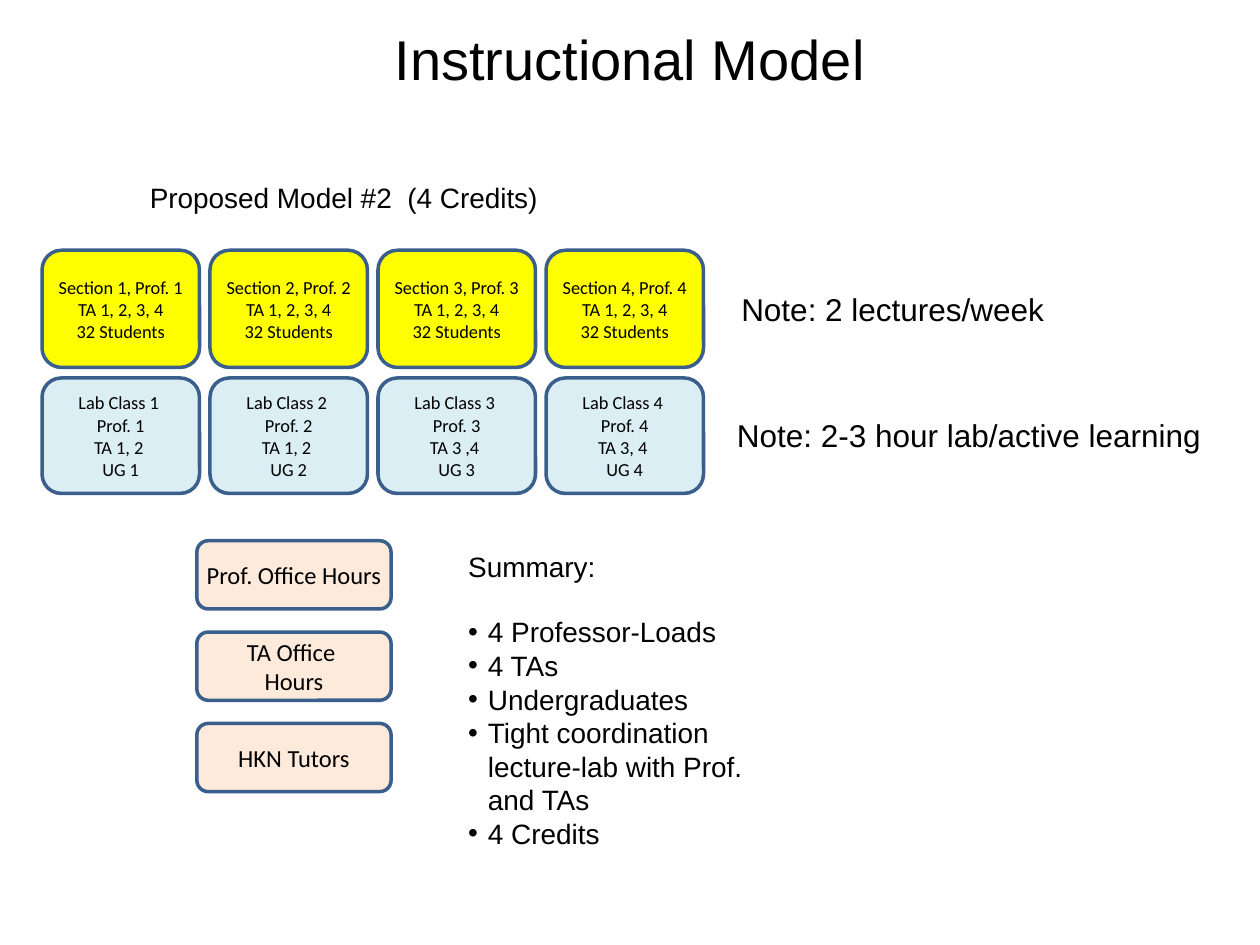
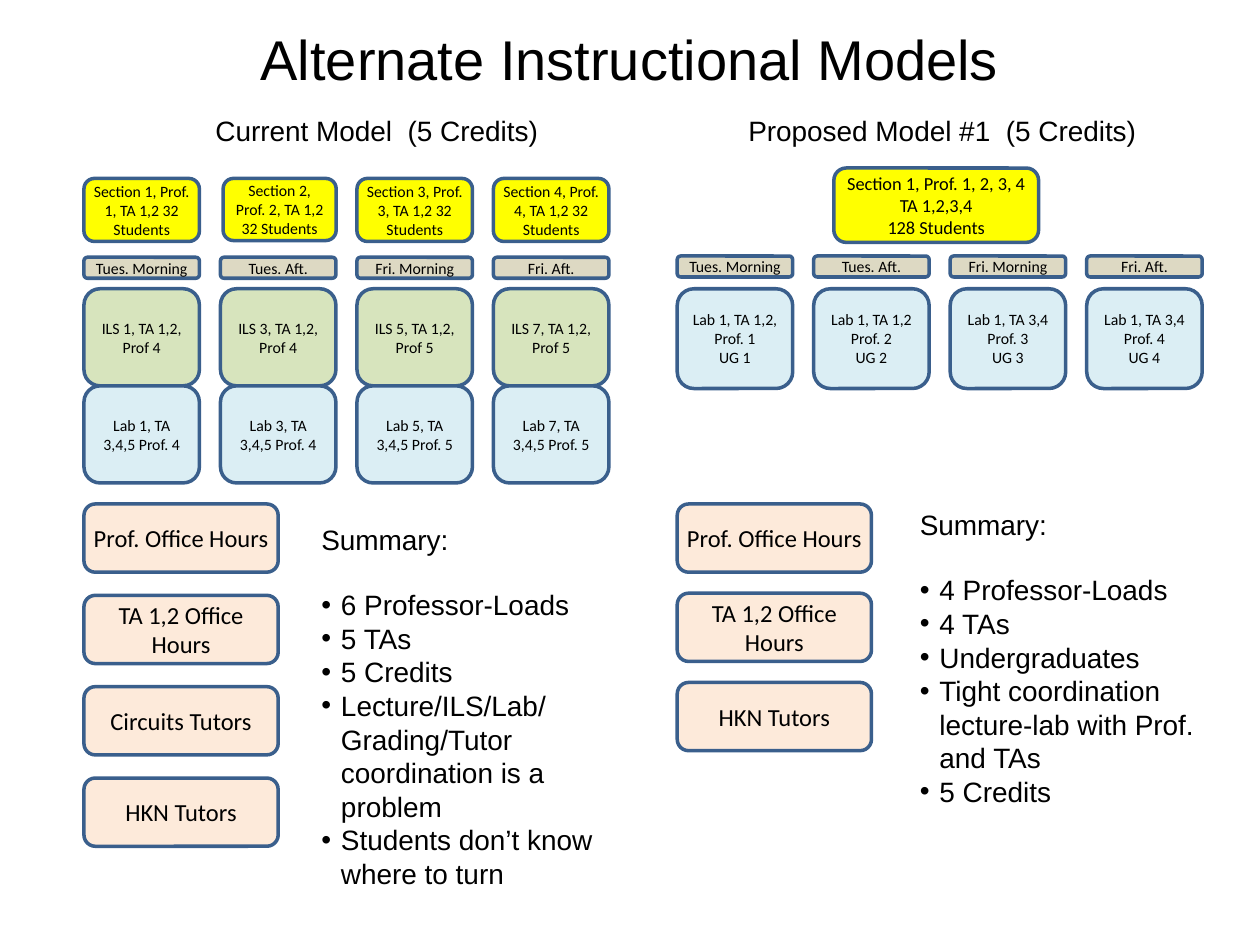
from dataclasses import dataclass

from lxml import etree
from pptx import Presentation
from pptx.dml.color import RGBColor
from pptx.enum.shapes import MSO_SHAPE
from pptx.enum.text import MSO_ANCHOR, MSO_AUTO_SIZE, PP_ALIGN
from pptx.oxml.ns import qn
from pptx.shapes.autoshape import Shape
from pptx.slide import Slide
from pptx.text.text import TextFrame
from pptx.util import Pt

ROUNDED = MSO_SHAPE.ROUNDED_RECTANGLE
MIDDLE, TOP = MSO_ANCHOR.MIDDLE, MSO_ANCHOR.TOP
CENTER, LEFT = PP_ALIGN.CENTER, PP_ALIGN.LEFT
NO_FIT = MSO_AUTO_SIZE.NONE

TITLE_ONLY = 5
BODY_FONT, BOX_FONT = "Arial", "Calibri"
BLACK, OUTLINE = "000000", "3A5F8C"
YELLOW, BLUE, GREEN = "FFFF00", "DBEEF4", "D7E4BD"
PEACH, TAN = "FDEADA", "DDD9C3"
TIGHT, ROOMY = (3.6, 1.8), (7.2, 3.6)
BULLET_INDENT = 11.25
SUMMARY_GAP = 18.4

DAYS = ["Tues. Morning", "Tues. Aft.", "Fri. Morning", "Fri. Aft."]


@dataclass(frozen=True)
class Area:
    left: float
    top: float
    width: float
    height: float


@dataclass(frozen=True)
class BoxStyle:
    fill: str
    size: float
    insets: tuple[float, float] = TIGHT


@dataclass(frozen=True)
class Series:
    """Equal boxes, one for each text, stepping across or down from the first."""
    first: Area
    style: BoxStyle
    texts: list[str]
    step_x: float = 0
    step_y: float = 0


LECTURE = BoxStyle(YELLOW, 10.5)
LAB = BoxStyle(BLUE, 10.5)
SMALL_LECTURE = BoxStyle(YELLOW, 9)
SMALL_LAB = BoxStyle(BLUE, 9)
ROOMY_LAB = BoxStyle(BLUE, 9, ROOMY)
STUDIO = BoxStyle(GREEN, 9, ROOMY)
DAY = BoxStyle(TAN, 9)
SUPPORT = BoxStyle(PEACH, 14)


def color(value: str) -> RGBColor:
    return RGBColor.from_string(value)


def prepare_frame(frame: TextFrame, insets: tuple[float, float],
                  anchor: MSO_ANCHOR = TOP, wrap: bool = True) -> None:
    frame.margin_left = frame.margin_right = Pt(insets[0])
    frame.margin_top = frame.margin_bottom = Pt(insets[1])
    frame.vertical_anchor = anchor
    frame.auto_size = NO_FIT
    frame.word_wrap = wrap


def write_lines(frame: TextFrame, text: str, font: str, size: float,
                alignment: PP_ALIGN) -> None:
    """Write one paragraph for each line of the text."""
    for index, line in enumerate(text.split("\n")):
        paragraph = frame.add_paragraph() if index else frame.paragraphs[0]
        paragraph.alignment = alignment
        run = paragraph.add_run()
        run.text = line
        run.font.name = font
        run.font.size = Pt(size)
        run.font.color.rgb = color(BLACK)


def place(shape: Shape, area: Area) -> None:
    shape.left, shape.top = Pt(area.left), Pt(area.top)
    shape.width, shape.height = Pt(area.width), Pt(area.height)


def add_titled_slide(presentation: Presentation, title: str) -> Slide:
    slide = presentation.slides.add_slide(presentation.slide_layouts[TITLE_ONLY])
    shape = slide.shapes.title
    place(shape, Area(12, 12, 696, 42.5))
    prepare_frame(shape.text_frame, TIGHT)
    write_lines(shape.text_frame, title, BODY_FONT, 32, CENTER)
    return slide


def add_box(slide: Slide, area: Area, style: BoxStyle, text: str) -> Shape:
    shape = slide.shapes.add_shape(ROUNDED, Pt(area.left), Pt(area.top),
                                   Pt(area.width), Pt(area.height))
    shape.shadow.inherit = False
    shape.fill.solid()
    shape.fill.fore_color.rgb = color(style.fill)
    shape.line.color.rgb = color(OUTLINE)
    shape.line.width = Pt(2)
    prepare_frame(shape.text_frame, style.insets, MIDDLE)
    write_lines(shape.text_frame, text, BOX_FONT, style.size, CENTER)
    return shape


def add_series(slide: Slide, series: Series) -> list[Shape]:
    first = series.first
    return [
        add_box(slide, Area(first.left + index * series.step_x,
                            first.top + index * series.step_y,
                            first.width, first.height), series.style, text)
        for index, text in enumerate(series.texts)
    ]


def add_text(slide: Slide, area: Area, text: str, size: float = 16,
             insets: tuple[float, float] = TIGHT, wrap: bool = False) -> TextFrame:
    shape = slide.shapes.add_textbox(Pt(area.left), Pt(area.top),
                                     Pt(area.width), Pt(area.height))
    prepare_frame(shape.text_frame, insets, wrap=wrap)
    write_lines(shape.text_frame, text, BODY_FONT, size, LEFT)
    return shape.text_frame


def add_summary(slide: Slide, area: Area, points: list[str]) -> None:
    frame = add_text(slide, area, "\n".join(["Summary:", *points]), wrap=True)
    heading, *bullets = frame.paragraphs
    heading.space_after = Pt(SUMMARY_GAP)
    for paragraph in bullets:
        properties = paragraph._p.get_or_add_pPr()
        properties.set("marL", str(Pt(BULLET_INDENT)))
        properties.set("indent", str(-Pt(BULLET_INDENT)))
        etree.SubElement(properties, qn("a:buFont"), typeface=BODY_FONT)
        etree.SubElement(properties, qn("a:buChar"), char="•")


def support_boxes(left: float, top: float, step: float, texts: list[str]) -> Series:
    return Series(Area(left, top, 111, 39), SUPPORT, texts, step_y=step)


def proposed_points(credits: int) -> list[str]:
    return ["4 Professor-Loads", "4 TAs", "Undergraduates",
            "Tight coordination lecture-lab with Prof. and TAs",
            f"{credits} Credits"]


def build_four_credit_slide(presentation: Presentation) -> None:
    slide = add_titled_slide(presentation, "Instructional Model")
    add_text(slide, Area(82, 101.5, 232, 23), "Proposed Model #2  (4 Credits)")

    # Lectures above their lab classes
    lectures = [f"Section {n}, Prof. {n}\nTA 1, 2, 3, 4\n32 Students"
                for n in range(1, 5)]
    assistants = ["1, 2", "1, 2", "3 ,4", "3, 4"]
    labs = [f"Lab Class {n} \nProf. {n}\nTA {pair} \nUG {n}"
            for n, pair in enumerate(assistants, start=1)]
    add_series(slide, Series(Area(24, 143, 90, 67), LECTURE, lectures, step_x=96))
    add_series(slide, Series(Area(24, 216, 90, 66), LAB, labs, step_x=96))
    add_text(slide, Area(416.5, 162, 189.5, 29), "Note: 2 lectures/week", 18, ROOMY)
    add_text(slide, Area(414, 234, 282, 29),
             "Note: 2-3 hour lab/active learning", 18, ROOMY)

    # Support and summary
    add_series(slide, support_boxes(112.5, 309, 52.2, [
        "Prof. Office Hours", "TA Office \nHours", "HKN Tutors"]))
    add_summary(slide, Area(264, 312, 174, 207), proposed_points(4))


def build_comparison_slide(presentation: Presentation) -> None:
    slide = add_titled_slide(presentation, "Alternate Instructional Models")
    current_left, proposed_left, step = 48, 387, 78

    # Current model
    add_text(slide, Area(119.5, 63, 194.5, 23), "Current Model  (5 Credits)")
    sections = [f"Section {n}, Prof. {n}, TA 1,2 32 Students" for n in range(1, 5)]
    sessions = [(1, 4), (3, 4), (5, 5), (7, 5)]
    studios = [f"ILS {n}, TA 1,2, Prof {professor}" for n, professor in sessions]
    labs = [f"Lab {n}, TA 3,4,5 Prof. {professor}" for n, professor in sessions]
    lecture_boxes = add_series(slide, Series(Area(current_left, 102, 66, 36),
                                             SMALL_LECTURE, sections, step))
    second_lecture = lecture_boxes[1]
    place(second_lecture, Area(127.5, 102, 64.6, 35.5))
    for top, height, style, texts in [(147, 12, DAY, DAYS),
                                      (165, 55.5, STUDIO, studios),
                                      (220.5, 55.5, ROOMY_LAB, labs)]:
        add_series(slide, Series(Area(current_left, top, 66, height),
                                 style, texts, step))
    add_series(slide, support_boxes(current_left, 288, 52.2, [
        "Prof. Office Hours", "TA 1,2 Office Hours",
        "Circuits Tutors", "HKN Tutors"]))
    add_summary(slide, Area(180, 296.5, 192, 217), [
        "6 Professor-Loads", "5 TAs", "5 Credits",
        "Lecture/ILS/Lab/Grading/Tutor coordination is a problem",
        "Students don’t know where to turn"])

    # Proposed model
    add_text(slide, Area(424, 63, 232, 23), "Proposed Model #1  (5 Credits)")
    add_box(slide, Area(476.5, 96, 117, 42.5), LECTURE,
            "Section 1, Prof. 1, 2, 3, 4\nTA 1,2,3,4\n128 Students")
    assistants = ["1,2,", "1,2", "3,4", "3,4"]
    proposed_labs = [f"Lab 1, TA {pair} Prof. {n}\nUG {n}"
                     for n, pair in enumerate(assistants, start=1)]
    for top, height, style, texts in [(146.3, 12, DAY, DAYS),
                                      (165, 57, SMALL_LAB, proposed_labs)]:
        add_series(slide, Series(Area(proposed_left, top, 66, height),
                                 style, texts, step))
    add_series(slide, support_boxes(proposed_left, 288, 51, [
        "Prof. Office Hours", "TA 1,2 Office Hours", "HKN Tutors"]))
    add_summary(slide, Area(522, 288, 174, 207), proposed_points(5))


def main() -> None:
    presentation = Presentation()
    presentation.slide_width, presentation.slide_height = Pt(720), Pt(540)
    build_four_credit_slide(presentation)
    build_comparison_slide(presentation)
    presentation.save("out.pptx")


if __name__ == "__main__":
    main()
